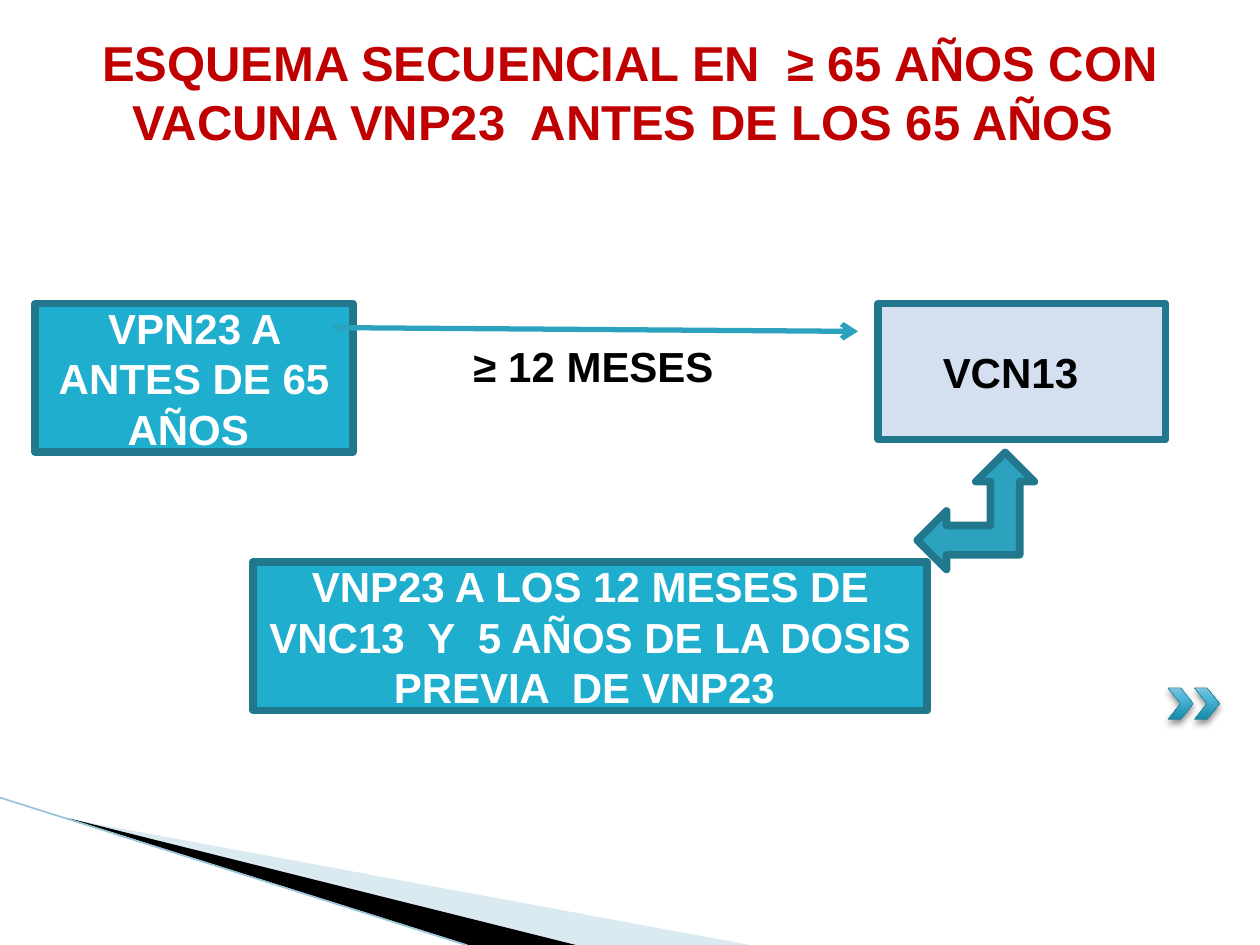
from dataclasses import dataclass

from lxml import etree
from pptx import Presentation
from pptx import util as u
from pptx.dml.color import RGBColor
from pptx.enum import shapes, text
from pptx.oxml import parse_xml
from pptx.oxml.ns import nsdecls, qn


@dataclass(frozen=True)
class Theme:
    font: str = "Arial"
    title_size: int = 28
    body_size: int = 24
    border_width: float = 4.33
    title: str = "C00000"
    dark: str = "000000"
    light: str = "FFFFFF"
    box: str = "1FAECD"
    pale_box: str = "D4DFEF"
    border: str = "21788D"
    accent: str = "2DA2BF"
    wedge: str = "A0CBDC"
    edge: str = "97C5D8"


theme = Theme()


def paint(shape, fill, line=None, width=theme.border_width):
    shape.shadow.inherit = False
    shape.fill.solid()
    shape.fill.fore_color.rgb = RGBColor.from_string(fill)
    if line:
        shape.line.color.rgb = RGBColor.from_string(line)
        shape.line.width = u.Pt(width)
    else:
        shape.line.fill.background()


def write(shape, wording, size, color, align, **frame_format):
    frame = shape.text_frame
    for name, value in {"word_wrap": True, **frame_format}.items():
        setattr(frame, name, value)
    paragraph = frame.paragraphs[0]
    paragraph.text = wording
    paragraph.alignment = align
    for name, value in {"name": theme.font, "size": u.Pt(size), "bold": True}.items():
        setattr(paragraph.font, name, value)
    paragraph.font.color.rgb = RGBColor.from_string(color)


presentation = Presentation()
presentation.slide_width = u.Inches(10)
presentation.slide_height = u.Inches(7.5)
slide = presentation.slides.add_slide(presentation.slide_layouts[6])
CENTER = text.PP_ALIGN.CENTER

# Corner wedges
wedges = [
    (theme.wedge, 40, [(0.55, 6.5), (5.95, 7.5), (4.56, 7.5)]),
    (theme.dark, 100, [(0.53, 6.49), (4.57, 7.5), (3.72, 7.5)]),
]
for color, opacity, points in wedges:
    start, *others = [(u.Inches(x), u.Inches(y)) for x, y in points]
    builder = slide.shapes.build_freeform(*start)
    builder.add_line_segments(others, close=True)
    wedge = builder.convert_to_shape()
    paint(wedge, color)
    if opacity < 100:
        color_element = wedge.fill._xPr.find(".//" + qn("a:srgbClr"))
        etree.SubElement(color_element, qn("a:alpha"), val=str(opacity * 1000))

# Straight lines: start, end, colour, width, arrowhead
lines = [
    ((0, 6.33), (3.7, 7.5), theme.edge, 0.95, False),
    ((2.64, 2.6), (6.81, 2.63), theme.accent, 3, True),
]


# Chevrons with a vertical gradient and a soft shadow
stops = "".join(
    f'<a:gs pos="{position * 1000}"><a:srgbClr val="{color}"/></a:gs>'
    for position, color in [(0, "158BA8"), (72, "51B8D9"), (100, "80C3DD")]
)
gradient = (
    f'<a:gradFill {nsdecls("a")} rotWithShape="1"><a:gsLst>{stops}</a:gsLst>'
    '<a:lin ang="16200000" scaled="0"/></a:gradFill>'
)
shadow = (
    f'<a:outerShdw {nsdecls("a")} blurRad="{u.Pt(4)}" dist="{u.Pt(2)}" dir="5400000">'
    f'<a:srgbClr val="{theme.dark}"><a:alpha val="46000"/></a:srgbClr></a:outerShdw>'
)
for left in (9.48, 9.27):
    chevron = slide.shapes.add_shape(
        shapes.MSO_SHAPE.CHEVRON, u.Inches(left), u.Inches(5.46), u.Inches(0.2), u.Inches(0.25)
    )
    paint(chevron, theme.accent, theme.border, 0.25)
    properties = chevron._element.spPr
    properties.replace(properties.find(qn("a:solidFill")), parse_xml(gradient))
    properties.find(qn("a:effectLst")).append(parse_xml(shadow))

# Boxes: place, fill, text colour, wording, right inset
boxes = [
    ((0.28, 2.41, 2.52, 1.18), theme.box, theme.light, "VPN23 A ANTES DE 65 AÑOS ", 0.1),
    ((6.97, 2.41, 2.28, 1.08), theme.pale_box, theme.dark, "VCN13", 0.28),
    ((2.01, 4.46, 5.35, 1.18), theme.box, theme.light,
     "VNP23 A LOS 12 MESES DE VNC13  Y  5 AÑOS DE LA DOSIS PREVIA  DE VNP23 ", 0.1),
]
for place, fill, color, wording, inset in boxes:
    box = slide.shapes.add_shape(shapes.MSO_SHAPE.RECTANGLE, *map(u.Inches, place))
    paint(box, fill, theme.border)
    write(box, wording, theme.body_size, color, CENTER,
          vertical_anchor=text.MSO_ANCHOR.MIDDLE, margin_right=u.Inches(inset))

for start, end, color, width, has_arrow in lines:
    line = slide.shapes.add_connector(
        shapes.MSO_CONNECTOR.STRAIGHT, *map(u.Inches, start + end)
    )
    line.line.color.rgb = RGBColor.from_string(color)
    line.line.width = u.Pt(width)
    if has_arrow:
        etree.SubElement(line.line._get_or_add_ln(), qn("a:tailEnd"), type="arrow")
    etree.SubElement(line._element.spPr, qn("a:effectLst"))

# Title and interval label
labels = [
    ((0, 0.21, 10, 1.04), theme.title_size, theme.title, CENTER,
     "ESQUEMA SECUENCIAL EN  ≥ 65 AÑOS CON VACUNA VNP23  ANTES DE LOS 65 AÑOS "),
    ((3.66, 2.65, 2.44, 0.5), theme.body_size, theme.dark, text.PP_ALIGN.LEFT, "≥ 12 MESES"),
]
for place, size, color, align, wording in labels:
    label = slide.shapes.add_textbox(*map(u.Inches, place))
    write(label, wording, size, color, align, auto_size=text.MSO_AUTO_SIZE.SHAPE_TO_FIT_TEXT)

bent_arrow = slide.shapes.add_shape(
    shapes.MSO_SHAPE.LEFT_UP_ARROW, u.Inches(7.28), u.Inches(3.59), u.Inches(0.93), u.Inches(0.93)
)
paint(bent_arrow, theme.accent, theme.border)

presentation.save("out.pptx")
